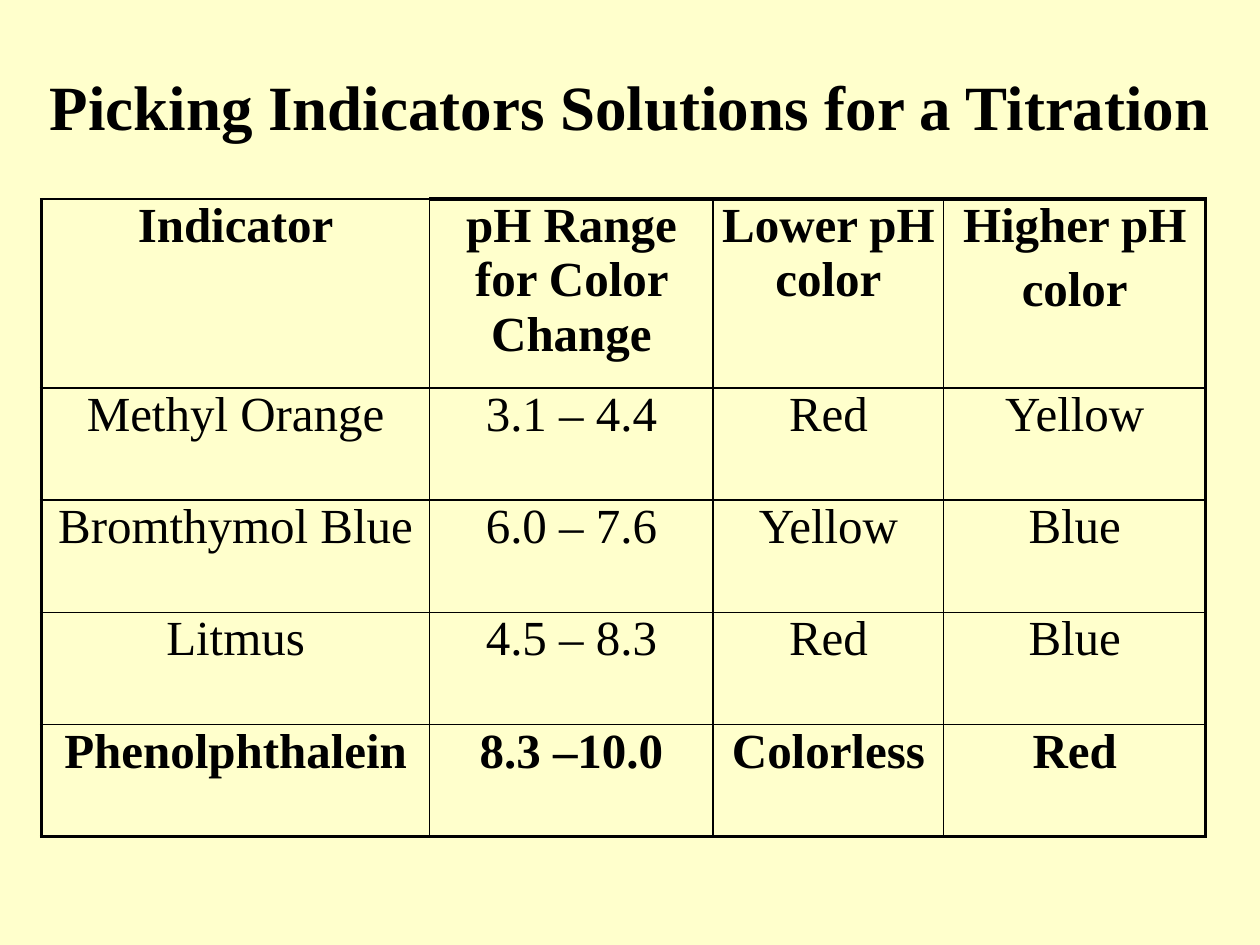
import pptx
import pptx.util
import pptx.dml.color
import pptx.enum.text
import pptx.oxml
import pptx.oxml.ns

Inches = pptx.util.Inches
Pt = pptx.util.Pt
RGBColor = pptx.dml.color.RGBColor
CENTER = pptx.enum.text.PP_ALIGN.CENTER
MIDDLE = pptx.enum.text.MSO_ANCHOR.MIDDLE
BLACK = RGBColor(0x00, 0x00, 0x00)
CREAM = RGBColor(0xFF, 0xFF, 0xCC)

WIDTHS = [3.08, 2.25, 1.83, 2.08]
HEIGHTS = [1.5] + [0.89] * 4
ROWS = [
    ["Indicator", "pH Range for Color Change", "Lower pH color", "Higher pH\ncolor"],
    ["Methyl Orange", "3.1 – 4.4", "Red", "Yellow"],
    ["Bromthymol Blue", "6.0 – 7.6", "Yellow", "Blue"],
    ["Litmus", "4.5 – 8.3", "Red", "Blue"],
    ["Phenolphthalein", "8.3 –10.0", "Colorless", "Red"],
]


def apply(item, values):
    for name, value in values.items():
        setattr(item, name, value)


class Page:
    font = "Times New Roman"
    thin = 1
    thick = 2.25

    def __init__(self, deck):
        self.slide = deck.slides.add_slide(deck.slide_layouts[6])
        fill = self.slide.background.fill
        fill.solid()
        fill.fore_color.rgb = CREAM

    def label(self, frame, text, size, bold):
        frame.word_wrap = True
        for i, line in enumerate(text.split("\n")):
            par = frame.paragraphs[0] if i == 0 else frame.add_paragraph()
            par.alignment = CENTER
            if i:
                par.space_before = Pt(5.6)
            run = par.add_run()
            run.text = line
            apply(run.font, {"name": self.font, "size": Pt(size), "bold": bold})
            run.font.color.rgb = BLACK

    def title(self, text, left, top, width, height):
        box = self.slide.shapes.add_textbox(
            Inches(left), Inches(top), Inches(width), Inches(height))
        box.text_frame.vertical_anchor = MIDDLE
        self.label(box.text_frame, text, 36, True)

    def border(self, cell, sides):
        props = cell._tc.get_or_add_tcPr()
        for i, (side, width) in enumerate(sides.items()):
            line = pptx.oxml.parse_xml(
                f'<a:ln{side} {pptx.oxml.ns.nsdecls("a")} w="{Pt(width)}">'
                f'<a:solidFill><a:srgbClr val="{BLACK}"/></a:solidFill></a:ln{side}>')
            props.insert(i, line)

    def table(self, rows, left, top, widths, heights):
        grid = self.slide.shapes.add_table(
            len(rows), len(widths), Inches(left), Inches(top),
            Inches(sum(widths)), Inches(sum(heights))).table
        apply(grid, {"first_row": False, "horz_banding": False})
        for col, width in zip(grid.columns, widths):
            col.width = Inches(width)
        for row, height in zip(grid.rows, heights):
            row.height = Inches(height)
        end, edge = len(rows) - 1, len(widths) - 1
        for r, texts in enumerate(rows):
            for c, text in enumerate(texts):
                cell = grid.cell(r, c)
                sides = ("left", "right", "top", "bottom")
                apply(cell, {f"margin_{side}": 0 for side in sides})
                cell.fill.background()
                self.label(cell.text_frame, text, 28, r in (0, end))
                heavy = {"L": c == 0, "R": c == edge,
                         "T": r == 0 and c > 0, "B": r == end}
                self.border(cell, {side: self.thick if on else self.thin
                                   for side, on in heavy.items()})


def main():
    deck = pptx.Presentation()
    apply(deck, {"slide_width": Inches(10), "slide_height": Inches(7.5)})
    page = Page(deck)
    page.title("Picking Indicators Solutions for a Titration", 0, 0, 10, 1.67)
    page.table(ROWS, 0.33, 1.58, WIDTHS, HEIGHTS)
    deck.save("out.pptx")


if __name__ == "__main__":
    main()
